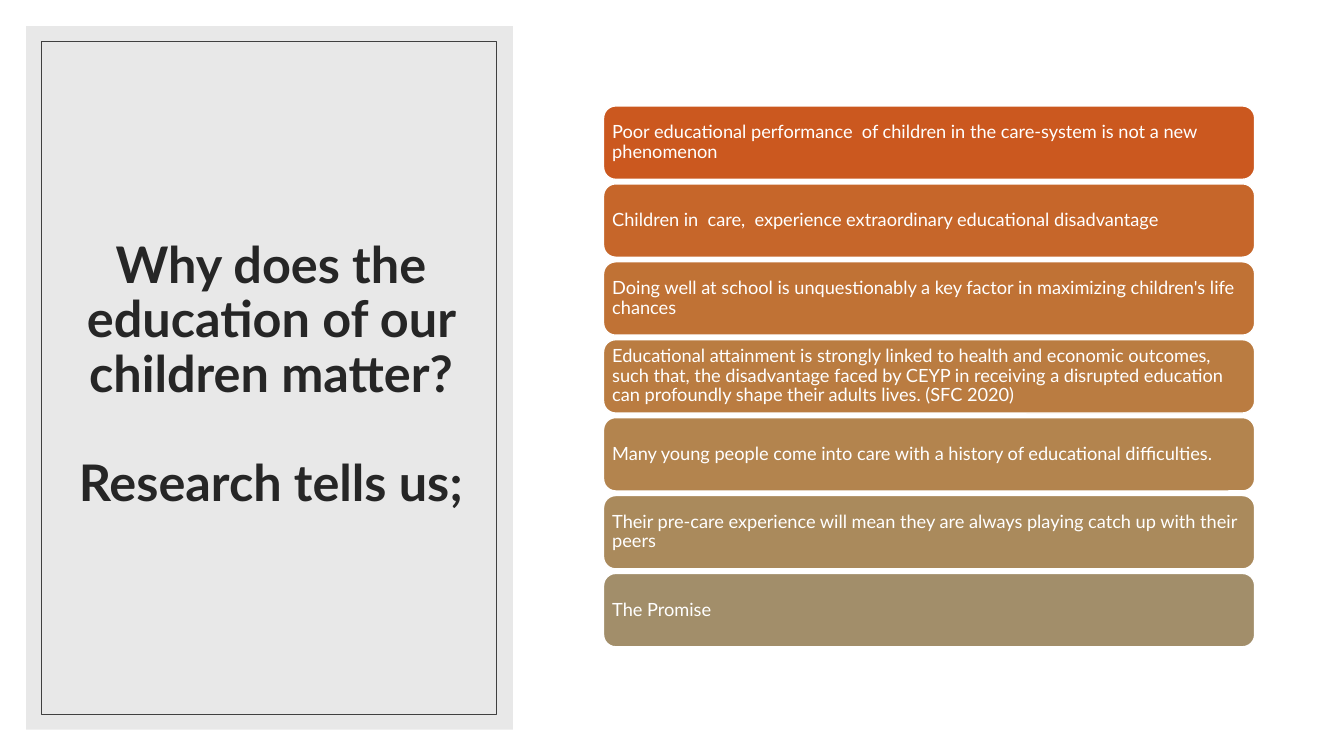
import pptx
import pptx.util
import pptx.dml.color
import pptx.enum.shapes
import pptx.enum.text
import pptx.oxml.ns
import lxml.etree

Cm, Pt = pptx.util.Cm, pptx.util.Pt
SHAPE = pptx.enum.shapes.MSO_SHAPE
ALIGN = pptx.enum.text.PP_ALIGN
MIDDLE = pptx.enum.text.MSO_ANCHOR.MIDDLE

THEME = {
    "font": "Lato",
    "white": "FFFFFF", "panel": "D9D9D9", "frame": "404040", "title": "262626",
    "reasons": ["CB581F", "C6662A", "C07235", "BA7C41", "B3844E", "AA8A5C", "A28E6A"],
    "title_size": Pt(36), "reason_size": Pt(13),
}


def add_block(kind, box, fill=None, line=None, line_width=0):
    block = slide.shapes.add_shape(kind, *[Cm(length) for length in box])
    block.shadow.inherit = False
    for part, color in ((block.fill, fill), (block.line.fill, line)):
        if color:
            part.solid()
            part.fore_color.rgb = pptx.dml.color.RGBColor.from_string(color)
        else:
            part.background()
    if line:
        block.line.width = Pt(line_width)
    return block


def format_text(frame, color, frame_format, paragraph_format, font_format):
    for name, value in frame_format.items():
        setattr(frame, name, value)
    for paragraph in frame.paragraphs:
        for name, value in paragraph_format.items():
            setattr(paragraph, name, value)
        for run in paragraph.runs:
            for name, value in font_format.items():
                setattr(run.font, name, value)
            run.font.color.rgb = pptx.dml.color.RGBColor.from_string(color)


# Slide
deck = pptx.Presentation()
deck.slide_width, deck.slide_height = Cm(33.87), Cm(19.05)
slide = deck.slides.add_slide(deck.slide_layouts[5])

# Backdrop and translucent panel
add_block(SHAPE.RECTANGLE, (0, 0, 33.87, 19.05), THEME["white"])
panel = add_block(SHAPE.RECTANGLE, (0.66, 0.66, 12.27, 17.73), THEME["panel"])
panel_color = panel.element.spPr.find(".//" + pptx.oxml.ns.qn("a:srgbClr"))
lxml.etree.SubElement(panel_color, pptx.oxml.ns.qn("a:alpha"), val="60000")

# Question, stacked above the panel
question = slide.shapes.title
slide.shapes.element.append(question.element)
question_place = {"left": Cm(1.6), "top": Cm(1.55), "width": Cm(10.46), "height": Cm(15.85)}
for name, value in question_place.items():
    setattr(question, name, value)
question.text_frame.text = "Why does the education of our children matter?\nResearch tells us;"
format_text(
    question.text_frame, THEME["title"],
    {"word_wrap": True, "vertical_anchor": MIDDLE,
     "auto_size": pptx.enum.text.MSO_AUTO_SIZE.NONE},
    {"alignment": ALIGN.CENTER, "line_spacing": 0.9, "space_before": Pt(0)},
    {"name": THEME["font"], "size": THEME["title_size"], "bold": True},
)
question.text_frame.paragraphs[1].space_before = Pt(39)

# Thin frame inside the panel
add_block(SHAPE.RECTANGLE, (1.04, 1.04, 11.46, 16.97), line=THEME["frame"], line_width=0.5)

# Reasons, evenly stacked
reasons = [
    "Poor educational performance  of children in the care-system is not a new phenomenon",
    "Children in  care,  experience extraordinary educational disadvantage",
    "Doing well at school is unquestionably a key factor in maximizing children's life chances",
    "Educational attainment is strongly linked to health and economic outcomes, such that, "
    "the disadvantage faced by CEYP in receiving a disrupted education can profoundly shape "
    "their adults lives. (SFC 2020)",
    "Many young people come into care with a history of educational difficulties.",
    "Their pre-care experience will mean they are always playing catch up with their peers",
    "The Promise",
]
first_top, last_top, reason_height = 2.67, 14.45, 1.85
pitch = (last_top - first_top) / (len(reasons) - 1)
margins = {f"margin_{side}": Cm(0.13) for side in ("left", "right", "top", "bottom")}

for index, (reason, color) in enumerate(zip(reasons, THEME["reasons"])):
    bar = add_block(
        SHAPE.ROUNDED_RECTANGLE,
        (15.21, first_top + index * pitch, 16.41, reason_height),
        color, THEME["white"], 1,
    )
    bar.text_frame.text = reason
    format_text(
        bar.text_frame, THEME["white"],
        {"word_wrap": True, "vertical_anchor": MIDDLE, **margins},
        {"alignment": ALIGN.LEFT, "line_spacing": 0.9},
        {"name": THEME["font"], "size": THEME["reason_size"]},
    )

deck.save("out.pptx")
